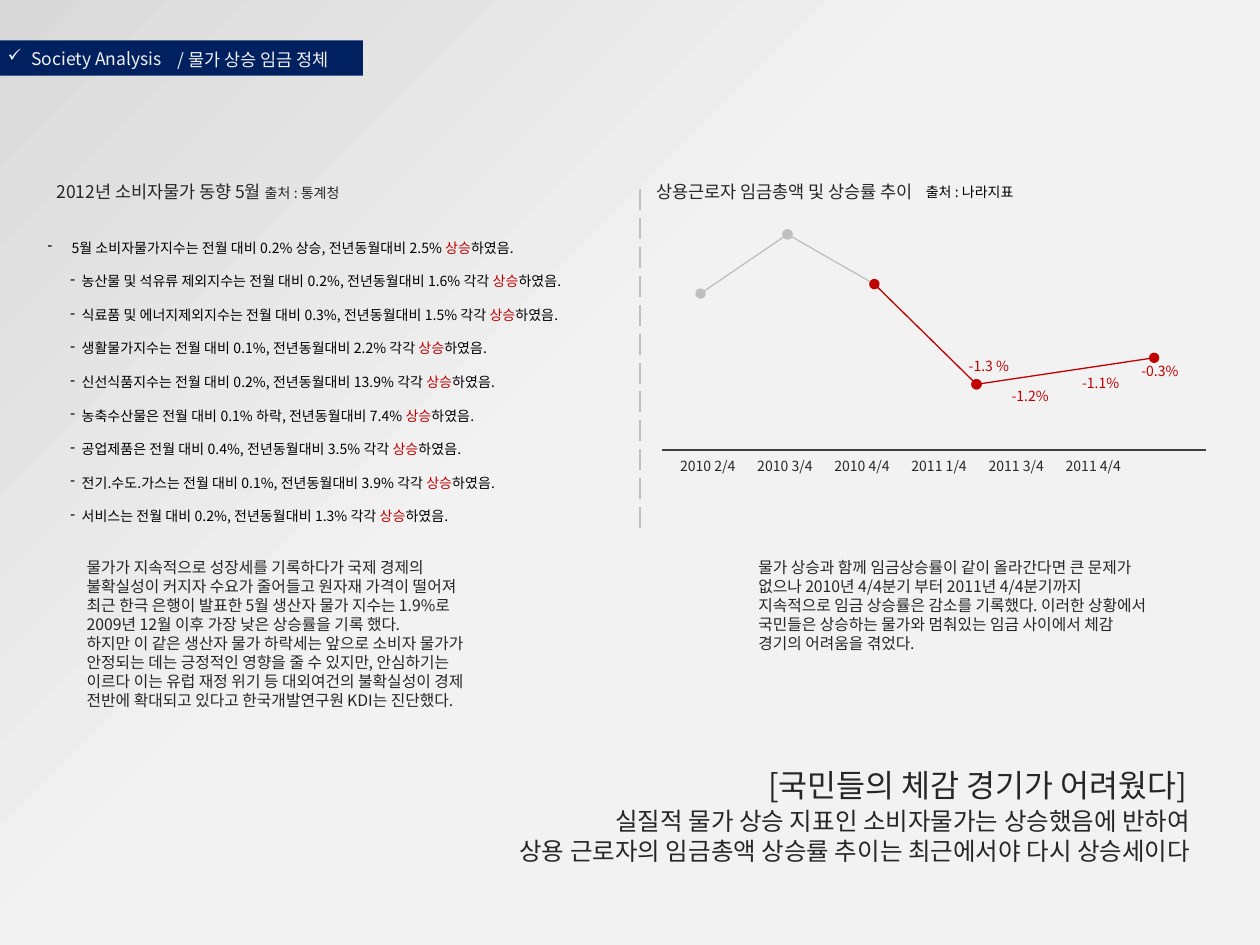
from dataclasses import dataclass
from itertools import pairwise

from lxml import etree
from pptx import Presentation
from pptx import util as u
from pptx.dml.color import RGBColor
from pptx.enum import dml, shapes, text
from pptx.oxml.ns import qn

COLUMNS, ROWS = 100, 75
CELL = u.Inches(0.1)


@dataclass(frozen=True)
class Theme:
    """Colours, font and type sizes of the slide."""
    font: str = "Noto Sans CJK KR"
    navy: str = "002060"
    red: str = "C00000"
    ink: str = "262626"
    black: str = "000000"
    axis: str = "404040"
    grey: str = "BFBFBF"
    pale: str = "F2F2F2"
    shade: str = "D9D9D9"
    small: float = 8
    body: float = 9
    label: float = 10
    lead: float = 14
    headline: float = 18


@dataclass(frozen=True)
class Box:
    """A region in grid columns and rows."""
    left: float
    top: float
    width: float
    height: float

    def inset(self, left, top, width, height):
        """Return a box placed relative to this one."""
        return Box(self.left + left, self.top + top, width, height)

    def lengths(self):
        """Return left, top, width and height as slide lengths."""
        return [round(n * CELL) for n in (self.left, self.top, self.width, self.height)]


THEME = Theme()
RISE = "상승"
PRICES = [
    ("5월 소비자물가지수는 전월 대비 0.2% 상승, 전년동월대비 2.5% ", 0.19, 0.19),
    *((line, 0.27, 0.09) for line in (
        "농산물 및 석유류 제외지수는 전월 대비 0.2%, 전년동월대비 1.6% 각각 ",
        "식료품 및 에너지제외지수는 전월 대비 0.3%, 전년동월대비 1.5% 각각 ",
        "생활물가지수는 전월 대비 0.1%, 전년동월대비 2.2% 각각 ",
        "신선식품지수는 전월 대비 0.2%, 전년동월대비 13.9% 각각 ",
        "농축수산물은 전월 대비 0.1% 하락, 전년동월대비 7.4% ",
        "공업제품은 전월 대비 0.4%, 전년동월대비 3.5% 각각 ",
        "전기.수도.가스는 전월 대비 0.1%, 전년동월대비 3.9% 각각 ",
        "서비스는 전월 대비 0.2%, 전년동월대비 1.3% 각각 ",
    )),
]
PRICE_NOTES = [
    "물가가 지속적으로 성장세를 기록하다가 국제 경제의 불확실성이 커지자 수요가 줄어들고 원자재 가격이 떨어져 최근 한극 은행이 발표한 5월 생산자 물가 지수는 1.9%로 2009년 12월 이후 가장 낮은 상승률을 기록 했다.",
    "하지만 이 같은 생산자 물가 하락세는 앞으로 소비자 물가가 안정되는 데는 긍정적인 영향을 줄 수 있지만, 안심하기는 이르다 이는 유럽 재정 위기 등 대외여건의 불확실성이 경제 전반에 확대되고 있다고 한국개발연구원 KDI는 진단했다.",
]
WAGE_NOTES = [
    "물가 상승과 함께 임금상승률이 같이 올라간다면 큰 문제가 없으나 2010년 4/4분기 부터 2011년 4/4분기까지 지속적으로 임금 상승률은 감소를 기록했다. 이러한 상황에서 국민들은 상승하는 물가와 멈춰있는 임금 사이에서 체감 경기의 어려움을 겪었다.",
]
QUARTERS = ["2010 2/4", "2010 3/4", "2010 4/4", "2011 1/4", "2011 3/4", "2011 4/4"]
WAGE_POINTS = [(4.6, 9.4), (11.5, 4.7), (18.4, 8.65), (26.5, 16.6), (40.6, 14.5)]
WAGE_RATES = [("-1.3 %", 24.9, 14), ("-1.2%", 28.3, 16.4),
              ("-1.1%", 33.9, 15.3), ("-0.3%", 38.6, 14.4)]


def style(para, size, color, align=text.PP_ALIGN.LEFT):
    """Set the font and alignment of a paragraph."""
    para.alignment = align
    para.font.size = u.Pt(size)
    para.font.color.rgb = RGBColor.from_string(color)
    para.font.name = THEME.font
    defaults = para._p.pPr.find(qn("a:defRPr"))
    etree.SubElement(defaults, qn("a:ea"), typeface=THEME.font)


def add_bullet(para, mark, margin, hang):
    """Give a paragraph a hanging bullet, in inches."""
    props = para._p.get_or_add_pPr()
    props.set("marL", str(u.Inches(margin)))
    props.set("indent", str(-u.Inches(hang)))
    bullet = etree.Element(qn("a:buChar"), char=mark)
    props.find(qn("a:defRPr")).addprevious(bullet)


def add_text(page, box, lines, size, color, align=text.PP_ALIGN.LEFT):
    """Add a wrapping text box with one paragraph per line."""
    frame = page.shapes.add_textbox(*box.lengths()).text_frame
    frame.word_wrap = True
    frame.text = "\n".join(lines)
    for para in frame.paragraphs:
        style(para, size, color, align)
    return frame


def add_span(para, words, color=None, size=None):
    """Add a run that may differ in colour or size."""
    span = para.add_run()
    span.text = words
    if color:
        span.font.color.rgb = RGBColor.from_string(color)
    if size:
        span.font.size = u.Pt(size)


def add_line(page, box, start, end, color, weight, dotted=False):
    """Add a straight line between two points of a box."""
    ends = [round((base + shift) * CELL) for point in (start, end)
            for base, shift in zip((box.left, box.top), point)]
    line = page.shapes.add_connector(shapes.MSO_CONNECTOR.STRAIGHT, *ends)
    line.line.color.rgb = RGBColor.from_string(color)
    line.line.width = u.Pt(weight)
    props = line._element.spPr
    if dotted:
        for tag in ("a:headEnd", "a:tailEnd"):
            etree.SubElement(props.find(qn("a:ln")), qn(tag), type="oval")
    etree.SubElement(props, qn("a:effectLst"))
    return line


def paint_background(page):
    """Shade the page from its top left corner."""
    fill = page.background.fill
    fill.gradient()
    fill.gradient_angle = 315
    for stop, color, place in zip(fill.gradient_stops, (THEME.shade, THEME.pale), (0, 0.45)):
        stop.color.rgb = RGBColor.from_string(color)
        stop.position = place


def add_header(page, box):
    """Place the title and topic on a navy bar."""
    bar = page.shapes.add_shape(shapes.MSO_SHAPE.RECTANGLE, *box.lengths())
    bar.shadow.inherit = False
    bar.fill.solid()
    bar.fill.fore_color.rgb = RGBColor.from_string(THEME.navy)
    bar.line.fill.background()
    title = page.shapes.title
    title.left, title.top, title.width, title.height = box.inset(-0.4, 0.1, 16.5, 2.7).lengths()
    title._element.addprevious(bar._element)
    frame = title.text_frame
    frame.text = "Society Analysis"
    frame.auto_size = text.MSO_AUTO_SIZE.NONE
    frame.vertical_anchor = text.MSO_ANCHOR.TOP
    style(frame.paragraphs[0], THEME.label, THEME.pale)
    add_bullet(frame.paragraphs[0], "✓", 0.19, 0.19)
    add_text(page, box.inset(13.1, 0.2, 15.1, 2.7), ["/ 물가 상승 임금 정체"], THEME.label, THEME.pale)


def add_price_panel(page, box):
    """Place the price heading, index list and notes."""
    heading = add_text(page, box.inset(0.7, 0, 33.6, 2.7), [""], THEME.label, THEME.ink)
    add_span(heading.paragraphs[0], "2012년 소비자물가 동향 5월 ")
    add_span(heading.paragraphs[0], "출처 : 통계청", size=THEME.small)
    frame = add_text(page, box.inset(0, 4.6, 45.7, 25.3), [""] * len(PRICES), THEME.small, THEME.black)
    for index, (para, (words, margin, hang)) in enumerate(zip(frame.paragraphs, PRICES)):
        para.space_before = u.Pt(9.6 if index else 0)
        add_bullet(para, "-", margin, hang)
        add_span(para, words)
        add_span(para, RISE, THEME.red)
        add_span(para, "하였음.")
    add_text(page, box.inset(3.1, 29.9, 33.6, 14.6), PRICE_NOTES, THEME.body, THEME.ink)


def add_wage_panel(page, box):
    """Place the wage heading, trend line and notes."""
    add_text(page, box.inset(0.1, 0, 33.6, 2.7), ["상용근로자 임금총액 및 상승률 추이"], THEME.label, THEME.ink)
    add_text(page, box.inset(21.5, 0.2, 15.4, 2.4), ["출처 : 나라지표"], THEME.small, THEME.black)
    divider = add_line(page, box, (-0.2, 1.1), (-0.2, 28), THEME.grey, 1.5)
    divider.line.dash_style = dml.MSO_LINE.LONG_DASH
    add_line(page, box, (1.5, 21.8), (44.7, 21.8), THEME.axis, 1)
    for index, quarter in enumerate(QUARTERS):
        add_text(page, box.inset(2 + 6.12 * index, 21.9, 7, 2.4), [quarter], THEME.small, THEME.ink)
    for index, (start, end) in enumerate(pairwise(WAGE_POINTS)):
        add_line(page, box, start, end, THEME.grey if index < 2 else THEME.red, 0.75, dotted=True)
    for rate, left, top in WAGE_RATES:
        add_text(page, box.inset(left, top, 6, 2.4), [rate], THEME.small, THEME.red)
    add_text(page, box.inset(8.2, 29.9, 33.6, 8.6), WAGE_NOTES, THEME.body, THEME.ink)


def add_conclusion(page, box):
    """Place the closing headline and its two lines."""
    add_text(page, box.inset(38.1, 0, 42, 4), ["[국민들의 체감 경기가 어려웠다]"],
             THEME.headline, THEME.ink, text.PP_ALIGN.CENTER)
    add_text(page, box.inset(0, 3.2, 77, 5.7),
             ["실질적 물가 상승 지표인 소비자물가는 상승했음에 반하여",
              "상용 근로자의 임금총액 상승률 추이는 최근에서야 다시 상승세이다"],
             THEME.lead, THEME.ink, text.PP_ALIGN.RIGHT)


def main():
    """Build the slide and save it."""
    deck = Presentation()
    deck.slide_width, deck.slide_height = COLUMNS * CELL, ROWS * CELL
    page = deck.slides.add_slide(deck.slide_layouts[5])
    paint_background(page)
    add_header(page, Box(0, 3.2, 28.8, 2.8))
    add_price_panel(page, Box(2.8, 13.9, 45.7, 44.5))
    add_wage_panel(page, Box(51, 13.9, 45, 38.5))
    add_conclusion(page, Box(18.5, 60.3, 80.1, 8.9))
    deck.save("out.pptx")


if __name__ == "__main__":
    main()
